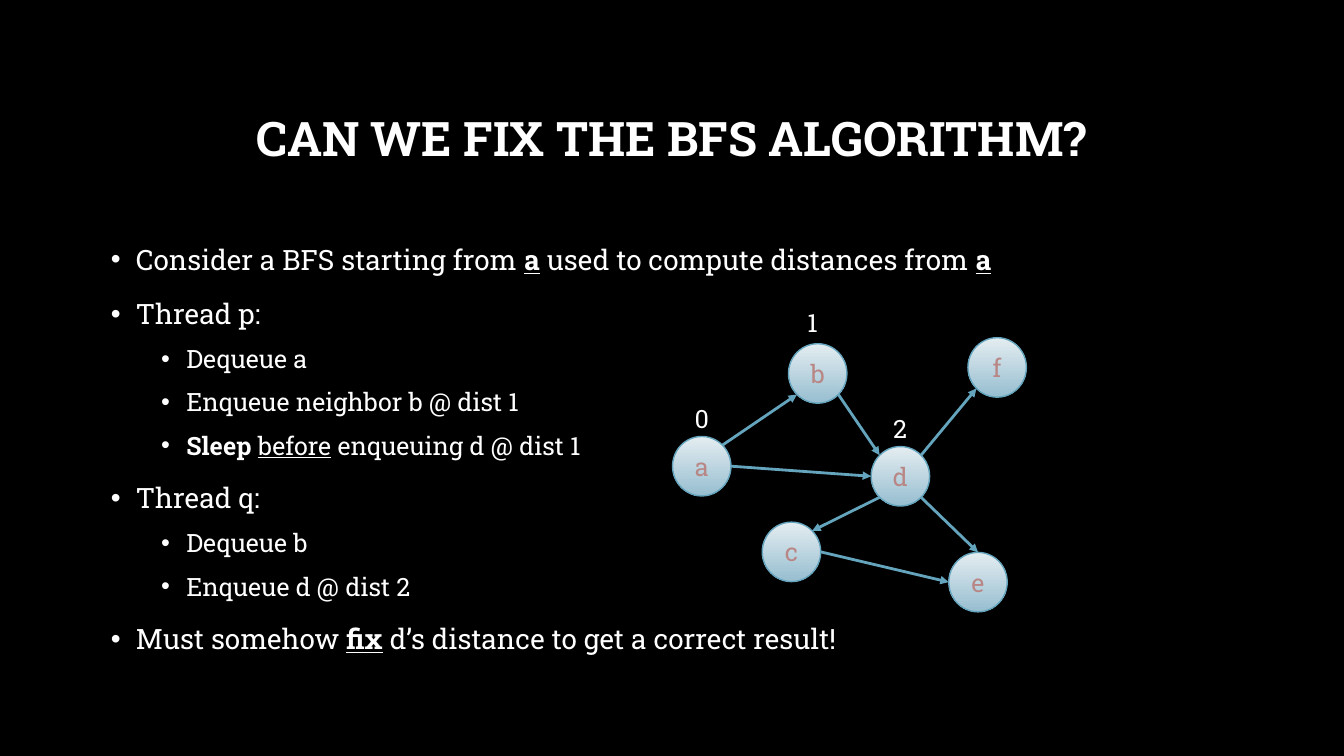
from math import cos, radians, sin

from lxml.etree import SubElement
from pptx import Presentation
from pptx.dml.color import RGBColor
from pptx.enum.shapes import MSO_CONNECTOR as CONN, MSO_SHAPE as SHAPE
from pptx.enum.text import MSO_ANCHOR as ANCHOR, MSO_AUTO_SIZE as AUTO, PP_ALIGN as ALIGN
from pptx.oxml.ns import qn
from pptx.util import Inches, Pt


def rgb(code):
    return RGBColor.from_string(code)


class GraphSlide:
    FONT = "Roboto Slab"
    BACK, TEXT, LETTER = "000000", "FFFFFF", "B88684"
    EDGE, TOP, BOTTOM = "64A4BD", "E4EDF1", "97BED0"
    NODE_W, NODE_H = 0.58, 0.59

    def __init__(self, prs):
        self.s = prs.slides.add_slide(prs.slide_layouts[5])
        self.s.background.fill.solid()
        self.s.background.fill.fore_color.rgb = rgb(self.BACK)
        self.centers = {}

    def run(self, p, text, size, color=TEXT, **style):
        r = p.add_run()
        r.text = text
        for key, value in {"name": self.FONT, "size": Pt(size), **style}.items():
            setattr(r.font, key, value)
        r.font.color.rgb = rgb(color)

    def title(self, text, *box):
        sp = self.s.shapes.title
        for key, value in zip(("left", "top", "width", "height"), box):
            setattr(sp, key, Inches(value))
        sp.text_frame.vertical_anchor = ANCHOR.MIDDLE
        p = sp.text_frame.paragraphs[0]
        p.alignment, p.line_spacing = ALIGN.CENTER, 0.9
        self.run(p, text, 34, bold=True)

    def bullets(self, items, *box):
        tf = self.s.shapes.add_textbox(*map(Inches, box)).text_frame
        tf.word_wrap = True
        for i, (level, runs) in enumerate(items):
            p = tf.add_paragraph() if i else tf.paragraphs[0]
            p.level, p.line_spacing = level, 1.2
            p.space_before = Pt(5 if level else 10)
            pPr = p._p.get_or_add_pPr()
            pPr.set("marL", str(Inches(0.25 + 0.5 * level)))
            pPr.set("indent", str(Inches(-0.25)))
            SubElement(pPr, qn("a:buFont")).set("typeface", "Arial")
            SubElement(pPr, qn("a:buChar")).set("char", "•")
            for text, style in runs:
                self.run(p, text, 18 if level else 20, **style)

    def node(self, name, x, y):
        sp = self.s.shapes.add_shape(
            SHAPE.OVAL, *map(Inches, (x, y, self.NODE_W, self.NODE_H)))
        sp.shadow.inherit = False
        sp.fill.gradient()
        sp.fill.gradient_angle = 270
        for stop, color, pos in zip(sp.fill.gradient_stops, (self.TOP, self.BOTTOM), (0, 1)):
            stop.color.rgb, stop.position = rgb(color), pos
        sp.line.color.rgb, sp.line.width = rgb(self.EDGE), Pt(1)
        tf = sp.text_frame
        tf.word_wrap, tf.vertical_anchor = False, ANCHOR.MIDDLE
        tf.paragraphs[0].alignment = ALIGN.CENTER
        self.run(tf.paragraphs[0], name, 18, self.LETTER)
        self.centers[name] = x + self.NODE_W / 2, y + self.NODE_H / 2

    def rim(self, name, angle):
        """Point on a node's rim; angles run clockwise from the right."""
        x, y = self.centers[name]
        a = radians(angle)
        return Inches(x + self.NODE_W / 2 * cos(a)), Inches(y + self.NODE_H / 2 * sin(a))

    def edge(self, start, out_angle, end, in_angle):
        c = self.s.shapes.add_connector(
            CONN.STRAIGHT, *self.rim(start, out_angle), *self.rim(end, in_angle))
        c.line.color.rgb, c.line.width = rgb(self.EDGE), Pt(2)
        SubElement(c.line._get_or_add_ln(), qn("a:tailEnd")).set("type", "triangle")
        SubElement(c._element.spPr, qn("a:effectLst"))

    def distance(self, text, x, y):
        tf = self.s.shapes.add_textbox(*map(Inches, (x, y, 0.34, 0.4))).text_frame
        tf.word_wrap, tf.auto_size = False, AUTO.SHAPE_TO_FIT_TEXT
        self.run(tf.paragraphs[0], text, 18)


def main():
    prs = Presentation()
    prs.slide_width, prs.slide_height = Inches(13.33), Inches(7.5)
    slide = GraphSlide(prs)

    # Title and bullets
    slide.title("CAN WE FIX THE BFS ALGORITHM?", 1, 0.67, 11.32, 1.45)
    plain, bold, under = {}, {"bold": True}, {"underline": True}
    strong = {**bold, **under}
    slide.bullets([
        (0, [("Consider a BFS starting from ", plain), ("a", strong),
             (" used to compute distances from ", plain), ("a", strong)]),
        (0, [("Thread p:", plain)]),
        (1, [("Dequeue a", plain)]),
        (1, [("Enqueue neighbor b @ dist 1", plain)]),
        (1, [("Sleep ", bold), ("before", under), (" enqueuing d @ dist 1", plain)]),
        (0, [("Thread q:", plain)]),
        (1, [("Dequeue b", plain)]),
        (1, [("Enqueue d @ dist 2", plain)]),
        (0, [("Must somehow ", plain), ("fix", strong),
             (" d’s distance to get a correct result!", plain)]),
    ], 1, 2.29, 11.32, 4.61)

    # Graph nodes
    for name, x, y in [("a", 6.67, 4.33), ("c", 7.56, 5.18), ("b", 7.82, 3.41),
                       ("d", 8.64, 4.43), ("e", 9.41, 5.48), ("f", 9.6, 3.35)]:
        slide.node(name, x, y)

    # Directed edges: start, exit angle, end, entry angle
    for edge in [("a", -45, "b", 135), ("b", 45, "d", -135), ("a", 0, "d", 180),
                 ("c", 0, "e", 180), ("d", -45, "f", 135), ("d", 45, "e", -90),
                 ("d", 135, "c", -45)]:
        slide.edge(*edge)

    # Distances from a
    for text, x, y in [("1", 7.91, 3), ("0", 6.79, 3.95), ("2", 8.76, 4.05)]:
        slide.distance(text, x, y)

    prs.save("out.pptx")


if __name__ == "__main__":
    main()
